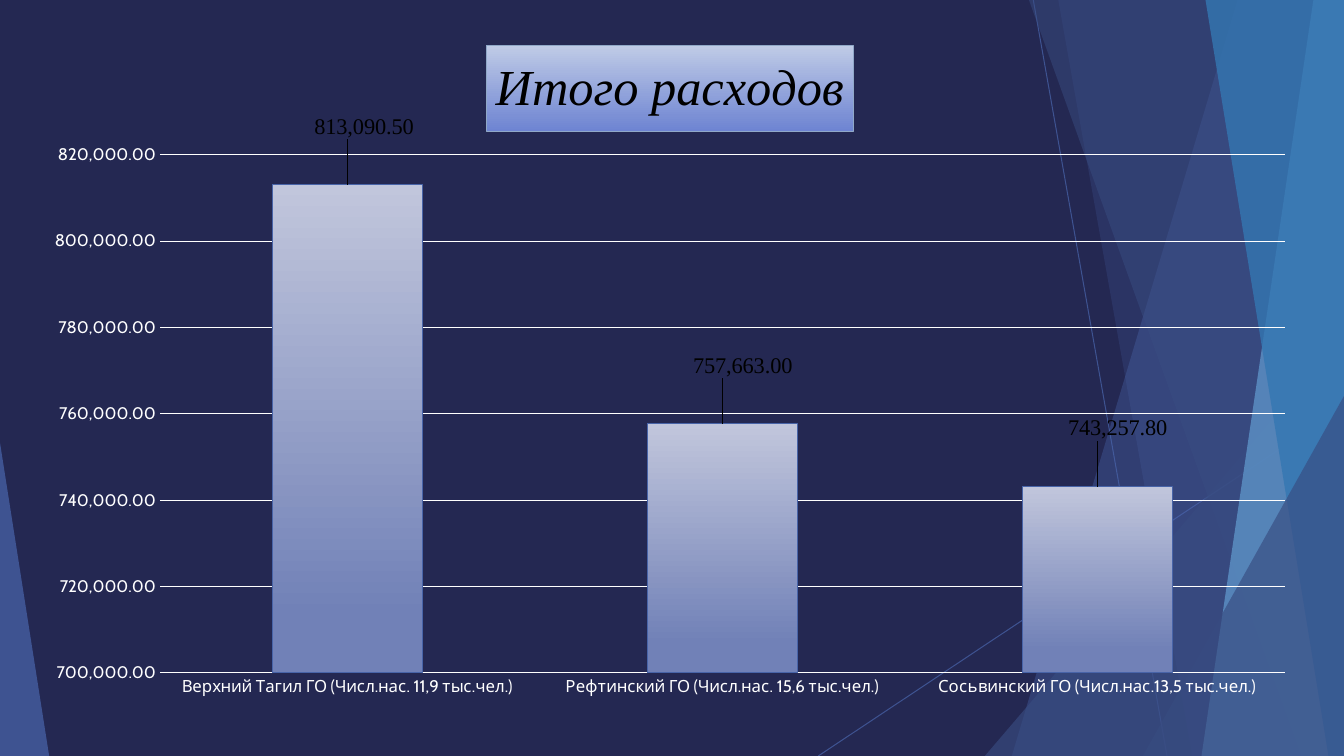
from dataclasses import dataclass

from lxml.etree import SubElement
from pptx import Presentation
from pptx.chart.data import CategoryChartData
from pptx.dml.color import RGBColor
from pptx.enum.chart import XL_CHART_TYPE, XL_LABEL_POSITION, XL_TICK_MARK
from pptx.enum.shapes import MSO_CONNECTOR, MSO_SHAPE
from pptx.oxml import parse_xml
from pptx.oxml.ns import nsdecls, qn
from pptx.util import Cm, Pt


@dataclass(frozen=True)
class Theme:
    background: str = "242852"
    blue: str = "4A66AC"
    navy: str = "384C81"
    sky: str = "629DD1"
    ocean: str = "3477B2"
    bar_top: str = "C1C6DC"
    bar_bottom: str = "7181B7"
    bar_line: str = "4864A8"
    title_top: str = "BFCBE6"
    title_bottom: str = "6E84D2"
    box_line: str = "90A8C8"
    light: str = "FFFFFF"
    dark: str = "000000"
    axis_font: str = "Cabin"
    accent_font: str = "Times New Roman"
    chart_size: int = 10
    axis_size: int = 12
    label_size: int = 16
    title_size: int = 36
    thin: float = 0.75


@dataclass(frozen=True)
class Box:
    left: float
    top: float
    width: float
    height: float


THEME = Theme()
PAGE = Box(0, 0, 33.87, 19.05)
CHART = Box(0.74, 0.66, 32.28, 17.25)
EXPENSES = {
    "Верхний Тагил ГО (Числ.нас. 11,9 тыс.чел.)": 813090.5,
    "Рефтинский ГО (Числ.нас. 15,6 тыс.чел.)": 757663,
    "Сосьвинский ГО (Числ.нас.13,5 тыс.чел.)": 743257.8,
}
LABEL_SHIFTS = [(0.013, -0.06), (0.016, -0.06), (0.016, -0.06)]
NUMBER_FORMAT = "#,##0.00"


def rgb(color):
    return RGBColor.from_string(color)


def set_opacity(shape, percent):
    for color in shape.element.iter(qn("a:srgbClr")):
        SubElement(color, qn("a:alpha")).set("val", str(percent * 1000))


def paint(shape, color, opacity):
    shape.shadow.inherit = False
    shape.fill.solid()
    shape.fill.fore_color.rgb = rgb(color)
    shape.line.fill.background()
    set_opacity(shape, opacity)


def add_ray(slide, box, start, end):
    ray = slide.shapes.add_connector(
        MSO_CONNECTOR.STRAIGHT,
        Cm(box.left + start[0]), Cm(box.top + start[1]),
        Cm(box.left + end[0]), Cm(box.top + end[1]),
    )
    ray.line.color.rgb = rgb(THEME.blue)
    ray.line.width = Pt(THEME.thin)
    SubElement(ray.element.spPr, qn("a:effectLst"))
    set_opacity(ray, 70)


def add_facet(slide, box, top_x, bottom_x, color, opacity):
    right, bottom = Cm(box.left + box.width), Cm(box.top + box.height)
    top = Cm(box.top)
    builder = slide.shapes.build_freeform(Cm(box.left + top_x), top)
    builder.add_line_segments(
        [(right, top), (right, bottom), (Cm(box.left + bottom_x), bottom)]
    )
    paint(builder.convert_to_shape(), color, opacity)


def add_corner(slide, box, left, top, width, apex, color, opacity):
    corner = slide.shapes.add_shape(
        MSO_SHAPE.ISOSCELES_TRIANGLE,
        Cm(box.left + left), Cm(box.top + top), Cm(width), Cm(box.height - top),
    )
    corner.adjustments[0] = apex
    paint(corner, color, opacity)


def add_backdrop(slide, box):
    slide.background.fill.solid()
    slide.background.fill.fore_color.rgb = rgb(THEME.background)
    add_ray(slide, box, (26.04, 0), (29.41, box.height))
    add_ray(slide, box, (box.width, 10.24), (20.62, box.height))
    add_facet(slide, box, 31.19, 25.5, THEME.blue, 36)
    add_facet(slide, box, 26.67, 30.05, THEME.blue, 20)
    add_corner(slide, box, 24.82, 8.46, 9.05, 1, THEME.navy, 66)
    add_facet(slide, box, 25.93, 32.79, THEME.navy, 50)
    add_facet(slide, box, 33.1, 30.28, THEME.sky, 70)
    add_facet(slide, box, 30.38, 33.48, THEME.ocean, 80)
    add_corner(slide, box, 28.8, 9.98, 5.07, 1, THEME.navy, 66)
    add_corner(slide, box, 0, 11.15, 1.24, 0, THEME.blue, 70)


def style_font(font, name, size, color):
    font.name = name
    font.size = Pt(size)
    font.color.rgb = rgb(color)
    font.bold = False


def style_block(block, top_color, bottom_color, line_color, end=1.0):
    block.fill.gradient()
    block.fill.gradient_angle = 270
    stops = block.fill.gradient_stops
    for stop, color, position in zip(stops, (top_color, bottom_color), (0, end)):
        stop.color.rgb = rgb(color)
        stop.position = position
    block.line.color.rgb = rgb(line_color)
    block.line.width = Pt(THEME.thin)


def manual_layout(extra="", **values):
    fields = "".join(f'<c:{name} val="{value}"/>' for name, value in values.items())
    return parse_xml(
        f'<c:layout {nsdecls("c")}><c:manualLayout>{extra}{fields}</c:manualLayout></c:layout>'
    )


def style_title(chart):
    title = chart.chart_title
    para = title.text_frame.paragraphs[0]
    para.text = "Итого расходов"
    span = para.runs[0]
    style_font(span.font, THEME.accent_font, THEME.title_size, THEME.dark)
    span.font.italic = True
    title.include_in_layout = False
    style_block(title.format, THEME.title_top, THEME.title_bottom, THEME.box_line)


def style_axes(chart):
    for axis in (chart.category_axis, chart.value_axis):
        axis.major_tick_mark = XL_TICK_MARK.NONE
        axis.minor_tick_mark = XL_TICK_MARK.NONE
        axis.format.line.fill.background()
        style_font(axis.tick_labels.font, THEME.axis_font, THEME.axis_size, THEME.light)
    values = chart.value_axis
    values.minimum_scale, values.maximum_scale = 700000, 820000
    values.major_unit = 20000
    values.tick_labels.number_format = NUMBER_FORMAT
    values.tick_labels.number_format_is_linked = False
    values.major_gridlines.format.line.color.rgb = rgb(THEME.light)
    values.major_gridlines.format.line.width = Pt(THEME.thin)


def style_label(point, shift):
    label = point.data_label
    style_font(label.font, THEME.accent_font, THEME.label_size, THEME.dark)
    label.position = XL_LABEL_POSITION.OUTSIDE_END
    frame = parse_xml(
        f'<c:spPr {nsdecls("c", "a")}><a:noFill/><a:ln w="{Pt(THEME.thin)}"><a:solidFill>'
        f'<a:srgbClr val="{THEME.box_line}"/></a:solidFill></a:ln></c:spPr>'
    )
    number = parse_xml(
        f'<c:numFmt {nsdecls("c")} formatCode="{NUMBER_FORMAT}" sourceLinked="0"/>'
    )
    index = label.font._element.xpath("ancestor::c:dLbl/c:idx")[0]
    for part in (frame, number, manual_layout(x=shift[0], y=shift[1])):
        index.addnext(part)


def add_expense_chart(slide, box):
    data = CategoryChartData(number_format=NUMBER_FORMAT)
    data.categories = list(EXPENSES)
    data.add_series("Series 1", list(EXPENSES.values()))
    chart = slide.shapes.add_chart(
        XL_CHART_TYPE.COLUMN_CLUSTERED,
        Cm(box.left), Cm(box.top), Cm(box.width), Cm(box.height), data,
    ).chart
    style_font(chart.font, THEME.axis_font, THEME.chart_size, THEME.light)
    chart.has_legend = False
    style_title(chart)
    style_axes(chart)
    plot = chart.plots[0]
    plot.gap_width = 150
    plot.vary_by_categories = False
    series = plot.series[0]
    style_block(series.format, THEME.bar_top, THEME.bar_bottom, THEME.bar_line, 0.88)
    for position, shift in enumerate(LABEL_SHIFTS):
        style_label(series.points[position], shift)
    area = chart.element.find(".//" + qn("c:plotArea"))
    for previous in area.findall(qn("c:layout")):
        area.remove(previous)
    inner = '<c:layoutTarget val="inner"/><c:xMode val="edge"/><c:yMode val="edge"/>'
    area.insert(0, manual_layout(inner, x=0.102, y=0.188, w=0.878, h=0.757))


def main():
    deck = Presentation()
    deck.slide_width, deck.slide_height = Cm(PAGE.width), Cm(PAGE.height)
    slide = deck.slides.add_slide(deck.slide_layouts[6])
    add_backdrop(slide, PAGE)
    add_expense_chart(slide, CHART)
    deck.save("out.pptx")


if __name__ == "__main__":
    main()
